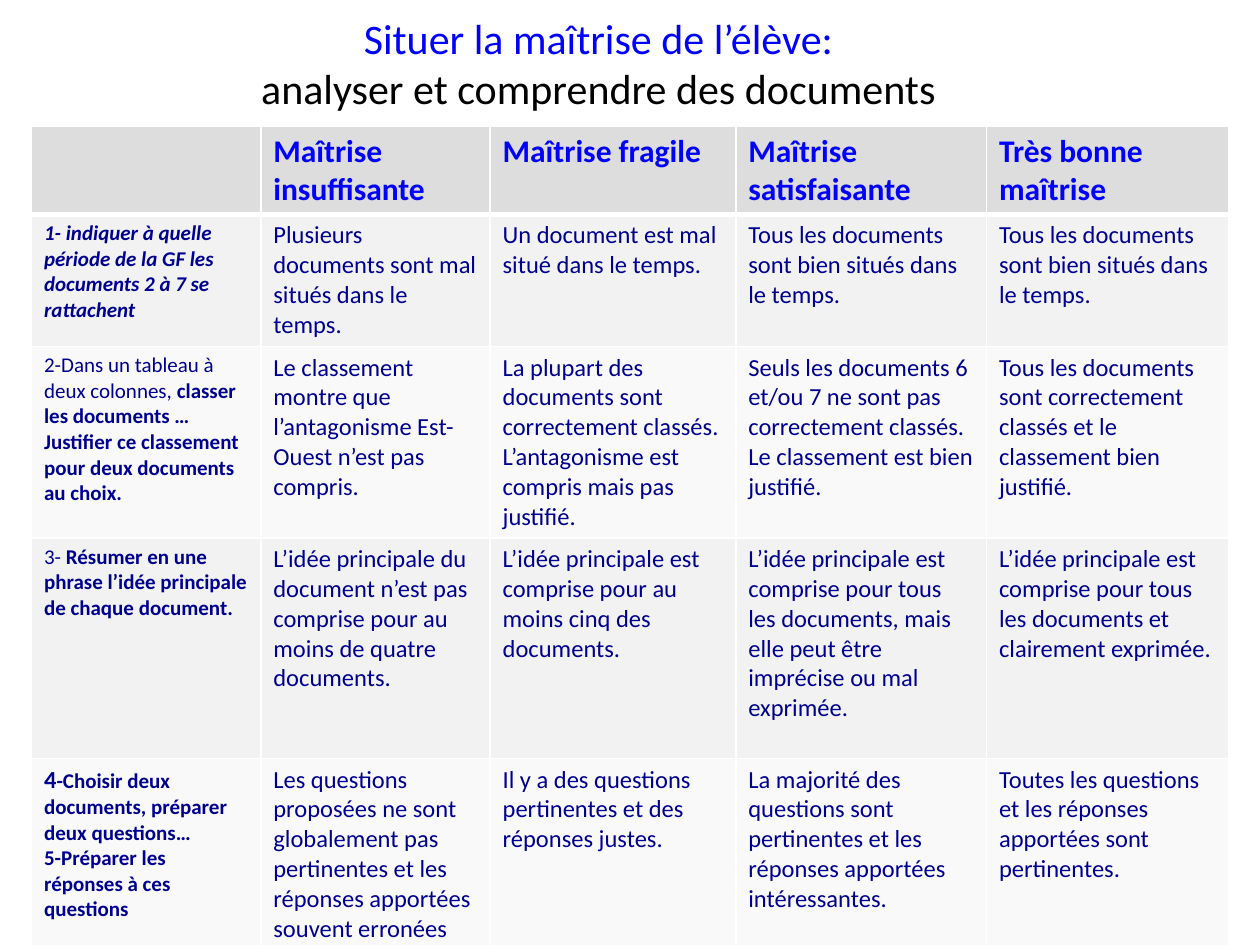
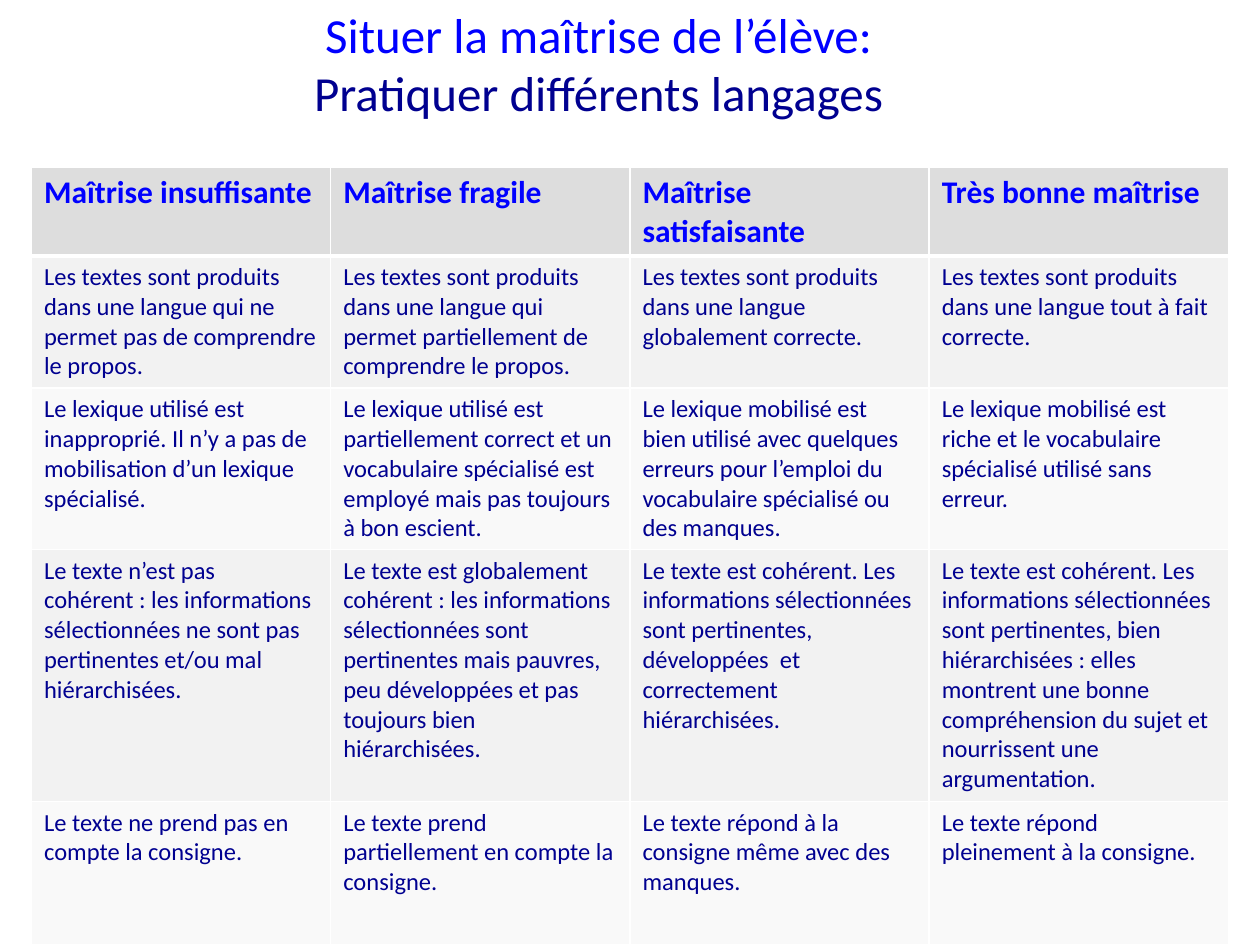
from typing import NamedTuple

from lxml.etree import SubElement
from pptx import Presentation
from pptx.dml.color import RGBColor
from pptx.enum.text import MSO_ANCHOR, PP_ALIGN
from pptx.oxml.ns import qn
from pptx.util import Inches, Pt

HEX = {
    "blue": "0000FF",
    "navy": "000090",
    "black": "000000",
    "white": "FFFFFF",
    "head": "DDDDDD",
    "odd": "F2F2F2",
    "even": "F9F9F9",
}
FONT = "Calibri"
LEFT, WIDTH = 0.25, 9.5

STYLES = {
    "head": {"size": Pt(18), "bold": True},
    "body": {"size": Pt(14), "bold": False},
    "mark": {"size": Pt(14), "bold": True},
    "task": {"size": Pt(12), "bold": False},
    "strong": {"size": Pt(12), "bold": True},
    "slant": {"size": Pt(12), "bold": True, "italic": True},
}


class Run(NamedTuple):
    text: str
    style: str = "body"


Cell = str | list[list[Run]]


class Grid(NamedTuple):
    """A title above a table of mastery levels; lengths in inches."""
    topic: str
    tint: str
    size: int
    top: float
    cols: list[float]
    rows: list[float]
    cells: list[list[Cell]]


LEVELS = [
    "Maîtrise insuffisante",
    "Maîtrise fragile",
    "Maîtrise satisfaisante",
    "Très bonne maîtrise",
]

READING = Grid(
    "analyser et comprendre des documents", "black", 24, 1,
    [1.82, 1.82, 1.95, 1.99, 1.92],
    [0.7, 1.05, 1.52, 1.75, 1.48],
    [
        ["", *LEVELS],
        [
            [[Run("1- indiquer à quelle période de la GF les documents 2 à 7 se rattachent", "slant")]],
            "Plusieurs documents sont mal situés dans le temps.",
            "Un document est mal situé dans le temps.",
            "Tous les documents sont bien situés dans le temps.",
            "Tous les documents sont bien situés dans le temps.",
        ],
        [
            [[Run("2-Dans un tableau à deux colonnes, ", "task"),
              Run("classer les documents …Justifier ce classement pour deux documents au choix.", "strong")]],
            "Le classement montre que l’antagonisme Est-Ouest n’est pas compris.",
            "La plupart des documents sont correctement classés. L’antagonisme est compris mais pas justifié.",
            "Seuls les documents 6 et/ou 7 ne sont pas correctement classés. Le classement est bien justifié.",
            "Tous les documents sont correctement classés et le classement bien justifié.",
        ],
        [
            [[Run("3- ", "task"),
              Run("Résumer en une phrase l’idée principale de chaque document.", "strong")]],
            "L’idée principale du document n’est pas comprise pour au moins de quatre documents.",
            "L’idée principale est comprise pour au moins cinq des documents.",
            "L’idée principale est comprise pour tous les documents, mais elle peut être imprécise ou mal exprimée.",
            "L’idée principale est comprise pour tous les documents et clairement exprimée.",
        ],
        [
            [[Run("4", "mark"),
              Run("-Choisir deux documents, préparer deux questions…", "strong")],
             [Run("5-Préparer les réponses à ces questions", "strong")]],
            "Les questions proposées ne sont globalement pas pertinentes et les réponses apportées souvent erronées",
            "Il y a des questions pertinentes et des réponses justes.",
            "La majorité des questions sont pertinentes et les réponses apportées intéressantes.",
            "Toutes les questions et les réponses apportées sont pertinentes.",
        ],
    ],
)

WRITING = Grid(
    "Pratiquer différents langages", "navy", 28, 1.33,
    [WIDTH / len(LEVELS)] * len(LEVELS),
    [0.7, 1.05, 1.28, 2, 1.14],
    [
        LEVELS,
        [
            "Les textes sont produits dans une langue qui ne permet pas de comprendre le propos.",
            "Les textes sont produits dans une langue qui permet partiellement de comprendre le propos.",
            "Les textes sont produits dans une langue globalement correcte.",
            "Les textes sont produits dans une langue tout à fait correcte.",
        ],
        [
            "Le lexique utilisé est inapproprié. Il n’y a pas de mobilisation d’un lexique spécialisé.",
            "Le lexique utilisé est partiellement correct et un vocabulaire spécialisé est employé mais pas toujours à bon escient.",
            "Le lexique mobilisé est bien utilisé avec quelques erreurs pour l’emploi du vocabulaire spécialisé ou des manques.",
            "Le lexique mobilisé est riche et le vocabulaire spécialisé utilisé sans erreur.",
        ],
        [
            "Le texte n’est pas cohérent : les informations sélectionnées ne sont pas pertinentes et/ou mal hiérarchisées.",
            "Le texte est globalement cohérent : les informations sélectionnées sont pertinentes mais pauvres, peu développées et pas toujours bien hiérarchisées.",
            "Le texte est cohérent. Les informations sélectionnées sont pertinentes, développées  et correctement hiérarchisées.",
            "Le texte est cohérent. Les informations sélectionnées sont pertinentes, bien hiérarchisées : elles montrent une bonne compréhension du sujet et nourrissent une argumentation.",
        ],
        [
            "Le texte ne prend pas en compte la consigne.",
            "Le texte prend partiellement en compte la consigne.",
            "Le texte répond à la consigne même avec des manques.",
            "Le texte répond pleinement à la consigne.",
        ],
    ],
)


def add_run(para, text: str, tint: str, style: dict) -> None:
    run = para.add_run()
    run.text = text
    for name, value in {"name": FONT, **style}.items():
        setattr(run.font, name, value)
    run.font.color.rgb = RGBColor.from_string(HEX[tint])


def add_title(slide, grid: Grid) -> None:
    box = slide.shapes.add_textbox(Inches(LEFT), Inches(0), Inches(9), Inches(1))
    frame = box.text_frame
    frame.word_wrap = True
    frame.vertical_anchor = MSO_ANCHOR.MIDDLE
    para = frame.paragraphs[0]
    para.alignment = PP_ALIGN.CENTER
    style = {"size": Pt(grid.size)}
    add_run(para, "Situer la maîtrise de l’élève:", "blue", style)
    para.add_line_break()
    add_run(para, grid.topic, grid.tint, style)


def add_edges(cell, row: int) -> None:
    """Draw white cell borders, thicker between the head and the body."""
    widths = {"L": 1, "R": 1, "T": 3 if row == 1 else 1, "B": 3 if row == 0 else 1}
    props = cell._tc.get_or_add_tcPr()
    for side, width in widths.items():
        line = SubElement(props, qn(f"a:ln{side}"), w=str(Pt(width)))
        fill = SubElement(line, qn("a:solidFill"))
        SubElement(fill, qn("a:srgbClr"), val=HEX["white"])


def fill_cell(cell, data: Cell, row: int) -> None:
    add_edges(cell, row)
    band = "head" if row == 0 else "odd" if row % 2 else "even"
    cell.fill.solid()
    cell.fill.fore_color.rgb = RGBColor.from_string(HEX[band])
    if not data:
        return
    if isinstance(data, str):
        data = [[Run(data, "body" if row else "head")]]
    frame = cell.text_frame
    for index, runs in enumerate(data):
        para = frame.add_paragraph() if index else frame.paragraphs[0]
        for run in runs:
            add_run(para, run.text, "navy" if row else "blue", STYLES[run.style])


def add_grid(slide, grid: Grid) -> None:
    table = slide.shapes.add_table(
        len(grid.rows), len(grid.cols), Inches(LEFT), Inches(grid.top),
        Inches(WIDTH), Inches(sum(grid.rows))).table
    table.horz_banding = False
    for col, width in zip(table.columns, grid.cols):
        col.width = Inches(width)
    for row, height in zip(table.rows, grid.rows):
        row.height = Inches(height)
    for row, line in enumerate(grid.cells):
        for col, data in enumerate(line):
            fill_cell(table.cell(row, col), data, row)


def main() -> None:
    deck = Presentation()
    deck.slide_width, deck.slide_height = Inches(10), Inches(7.5)
    for grid in (READING, WRITING):
        slide = deck.slides.add_slide(deck.slide_layouts[6])
        add_title(slide, grid)
        add_grid(slide, grid)
    deck.save("out.pptx")


if __name__ == "__main__":
    main()
